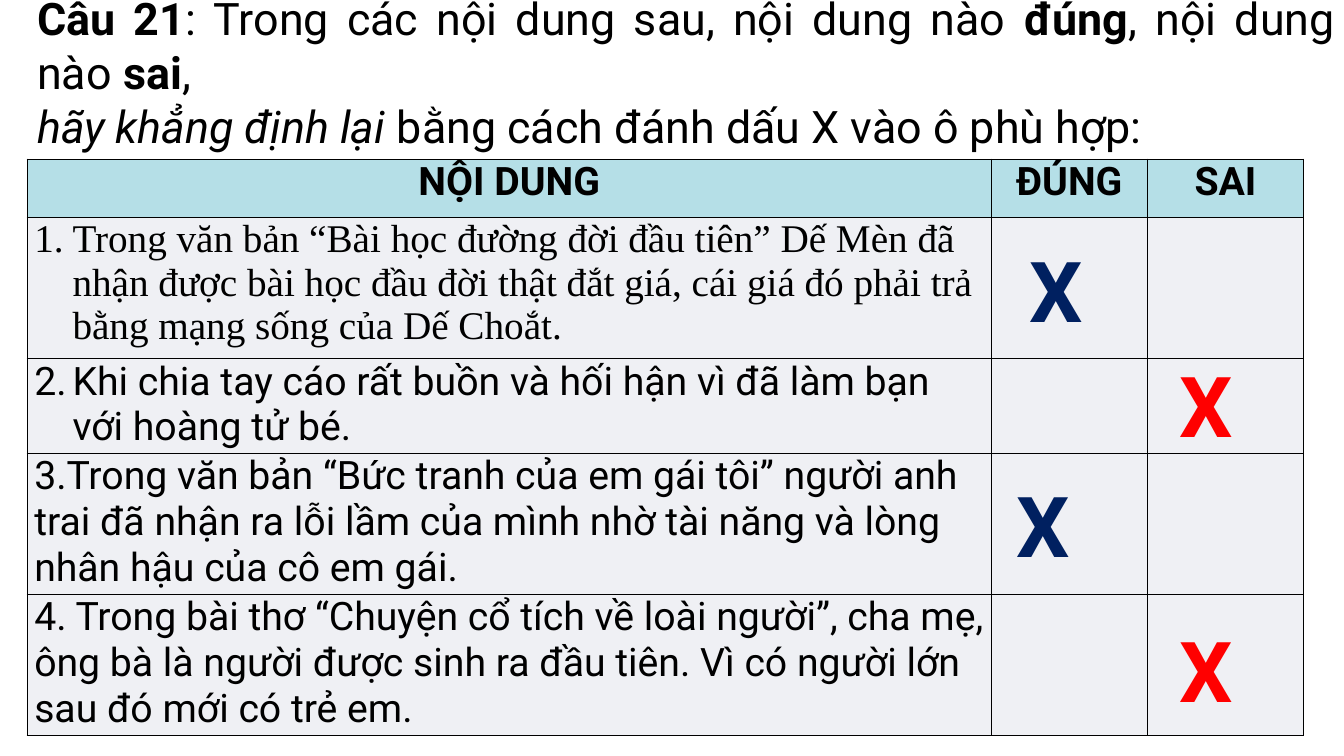
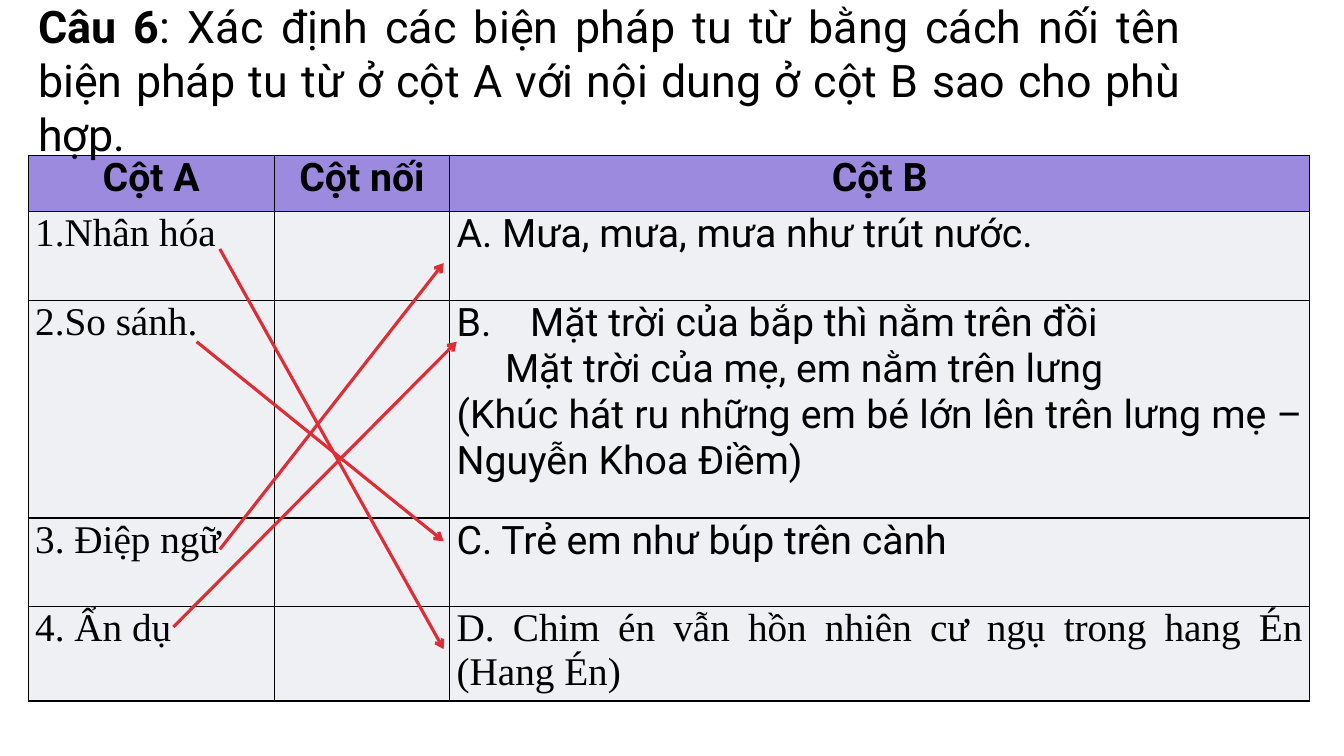
from dataclasses import dataclass

from lxml import etree
from pptx import Presentation
from pptx.dml.color import RGBColor
from pptx.enum.shapes import MSO_CONNECTOR
from pptx.enum.text import MSO_ANCHOR, PP_ALIGN
from pptx.oxml.ns import qn
from pptx.util import Inches, Pt

LEFT, CENTER, JUSTIFY = PP_ALIGN.LEFT, PP_ALIGN.CENTER, PP_ALIGN.JUSTIFY
MIDDLE, TOP = MSO_ANCHOR.MIDDLE, MSO_ANCHOR.TOP
STRAIGHT = MSO_CONNECTOR.STRAIGHT

SANS, SERIF = "Roboto", "Times New Roman"
BLACK, NAVY, RED, ARROW_RED = "000000", "002060", "FF0000", "DD2D35"
BODY_FILL, TEAL, PURPLE = "EFF0F4", "B5DFE7", "9C8ADE"
BORDER_SIDES = ("a:lnL", "a:lnR", "a:lnT", "a:lnB")


def color(hex_string):
    """Turn a hex string into a colour."""
    return RGBColor.from_string(hex_string)


def inches(*lengths):
    """Turn plain numbers into lengths."""
    return [Inches(length) for length in lengths]


@dataclass
class Line:
    """One paragraph of a table cell."""

    text: str
    font: str = SANS
    align: int = LEFT
    number: int = 0
    indent: float = 0
    tab: float = 0


class Worksheet:
    """Hold the shared style and the current slide."""

    def __init__(self):
        """Start a widescreen presentation."""
        self.presentation = Presentation()
        self.presentation.slide_width = Inches(13.33)
        self.presentation.slide_height = Inches(7.5)
        self.slide = None

    def new_slide(self):
        """Add a blank slide and make it current."""
        self.slide = self.presentation.slides.add_slide(self.presentation.slide_layouts[6])

    def style(self, paragraph, size, name=SANS, hex_string=BLACK, bold=None):
        """Set the font of a whole paragraph."""
        font = paragraph.font
        font.size, font.name, font.bold = Pt(size), name, bold
        font.color.rgb = color(hex_string)

    def text_box(self, left, top, width, height, anchor=TOP):
        """Add a wrapping text box and return its text frame."""
        shape = self.slide.shapes.add_textbox(*inches(left, top, width, height))
        frame = shape.text_frame
        frame.word_wrap = True
        frame.vertical_anchor = anchor
        return frame

    def question(self, left, top, width, *paragraphs):
        """Add the question from paragraphs of (text, emphasis) pairs."""
        frame = self.text_box(left, top, width, 1.18, MIDDLE)
        for index, pieces in enumerate(paragraphs):
            paragraph = frame.add_paragraph() if index else frame.paragraphs[0]
            paragraph.alignment = JUSTIFY
            self.style(paragraph, 32)
            for text, emphasis in pieces:
                run = paragraph.add_run()
                run.text = text
                run.font.bold = emphasis == "bold"
                run.font.italic = emphasis == "italic"

    def mark(self, left, top, hex_string):
        """Add a large X."""
        paragraph = self.text_box(left, top, 1.04, 1.11).paragraphs[0]
        paragraph.text = "X"
        self.style(paragraph, 60, hex_string=hex_string, bold=True)

    def arrow(self, start, end):
        """Add a red arrow between two points."""
        line = self.slide.shapes.add_connector(STRAIGHT, *inches(*start, *end))
        line.line.color.rgb = color(ARROW_RED)
        line.line.width = Pt(2.25)
        etree.SubElement(line.line._get_or_add_ln(), qn("a:tailEnd"), type="arrow")
        etree.SubElement(line._element.spPr, qn("a:effectLst"))

    def table(self, left, top, widths, heights, header, header_fill, rows):
        """Add a bordered table with a coloured header row."""
        frame = self.slide.shapes.add_table(
            len(heights), len(widths), *inches(left, top, sum(widths), sum(heights))
        )
        table = frame.table
        table.first_row = table.horz_banding = False
        for column, width in zip(table.columns, widths):
            column.width = Inches(width)
        for row, height in zip(table.rows, heights):
            row.height = Inches(height)
        titles = [[Line(title, align=CENTER)] for title in header]
        for row_index, row in enumerate([titles, *rows]):
            for column_index, lines in enumerate(row):
                cell = table.cell(row_index, column_index)
                is_header = row_index == 0
                self.cell(cell, lines, header_fill if is_header else BODY_FILL, is_header)

    def cell(self, cell, lines, fill, bold):
        """Fill, border and write one table cell."""
        cell.margin_left = cell.margin_right = Inches(0.07)
        cell.margin_top = cell.margin_bottom = 0
        cell.fill.solid()
        cell.fill.fore_color.rgb = color(fill)
        properties = cell._tc.get_or_add_tcPr()
        for index, side in enumerate(BORDER_SIDES):
            border = etree.Element(qn(side), w=str(Pt(1)))
            solid = etree.SubElement(border, qn("a:solidFill"))
            etree.SubElement(solid, qn("a:srgbClr"), val=BLACK)
            properties.insert(index, border)
        for index, line in enumerate(lines):
            frame = cell.text_frame
            paragraph = frame.add_paragraph() if index else frame.paragraphs[0]
            self.cell_line(paragraph, line, bold)

    def cell_line(self, paragraph, line, bold):
        """Write one paragraph of a cell."""
        paragraph.text = line.text
        paragraph.alignment = line.align
        properties = paragraph._p.get_or_add_pPr()
        if line.indent:
            properties.set("marL", str(Inches(line.indent)))
        if line.number:
            properties.set("indent", str(-Inches(line.indent)))
            etree.SubElement(
                properties, qn("a:buAutoNum"), type="arabicPeriod", startAt=str(line.number)
            )
        if line.tab:
            tabs = etree.SubElement(properties, qn("a:tabLst"))
            etree.SubElement(tabs, qn("a:tab"), pos=str(Inches(line.tab)), algn="l")
        self.style(paragraph, 28, line.font, bold=bold)


def true_or_false(sheet):
    """Build the true or false question."""
    sheet.new_slide()
    statements = [
        Line(
            "Trong văn bản “Bài học đường đời đầu tiên” Dế Mèn đã nhận được bài học "
            "đầu đời thật đắt giá, cái giá đó phải trả bằng mạng sống của Dế Choắt.",
            SERIF, number=1, indent=0.38,
        ),
        Line(
            "Khi chia tay cáo rất buồn và hối hận vì đã làm bạn với hoàng tử bé.",
            number=2, indent=0.38,
        ),
        Line(
            "3.Trong văn bản “Bức tranh của em gái tôi” người anh trai đã nhận ra "
            "lỗi lầm của mình nhờ tài năng và lòng nhân hậu của cô em gái."
        ),
        Line(
            "4. Trong bài thơ “Chuyện cổ tích về loài người”, cha mẹ, ông bà là người "
            "được sinh ra đầu tiên. Vì có người lớn sau đó mới có trẻ em."
        ),
    ]
    sheet.table(
        0.27, 1.58, [9.56, 1.55, 1.55], [0.58, 1.4, 0.94, 1.4, 1.4],
        ["NỘI DUNG", "ĐÚNG", "SAI"], TEAL,
        [[[statement], [], []] for statement in statements],
    )
    sheet.question(
        0.27, 0.12, 13.07,
        [
            ("Câu 21", "bold"),
            (": Trong các nội dung sau, nội dung nào ", ""),
            ("đúng", "bold"),
            (", nội dung nào ", ""),
            ("sai", "bold"),
            (",", ""),
        ],
        [
            ("hãy khẳng định lại", "italic"),
            (" bằng cách đánh dấu X vào ô phù hợp:", ""),
        ],
    )
    for left, top, hex_string in [
        (10.11, 2.32, NAVY),
        (11.6, 3.46, RED),
        (9.98, 4.65, NAVY),
        (11.6, 6.09, RED),
    ]:
        sheet.mark(left, top, hex_string)


def matching(sheet):
    """Build the matching question."""
    sheet.new_slide()
    pairs = [
        ("1.Nhân hóa", [Line("A. Mưa, mưa, mưa như trút nước.")]),
        (
            "2.So sánh.",
            [
                Line("B.\tMặt trời của bắp thì nằm trên đồi", tab=0.73),
                Line("Mặt trời của mẹ, em nằm trên lưng", indent=0.48),
                Line(
                    "(Khúc hát ru những em bé lớn lên trên lưng mẹ – Nguyễn Khoa Điềm)",
                    align=JUSTIFY,
                ),
            ],
        ),
        ("3. Điệp ngữ", [Line("C. Trẻ em như búp trên cành")]),
        (
            "4. Ẩn dụ",
            [Line("D. Chim én vẫn hồn nhiên cư ngụ trong hang Én (Hang Én)", SERIF, JUSTIFY)],
        ),
    ]
    sheet.table(
        0.28, 1.54, [2.44, 1.74, 8.53], [0.56, 0.88, 2.16, 0.88, 0.93],
        ["Cột A", "Cột nối", "Cột B"], PURPLE,
        [[[Line(device, SERIF)], [], example] for device, example in pairs],
    )
    sheet.question(
        0.28, 0.2, 11.54,
        [
            ("Câu 6", "bold"),
            (
                ": Xác định các biện pháp tu từ bằng cách nối tên biện pháp tu từ "
                "ở cột A với nội dung ở cột B sao cho phù hợp.",
                "",
            ),
        ],
    )
    for start, end in [
        ((2.18, 2.47), (4.4, 6.44)),
        ((1.95, 3.39), (4.4, 5.37)),
        ((2.18, 5.45), (4.4, 2.61)),
        ((1.72, 6.22), (4.53, 3.39)),
    ]:
        sheet.arrow(start, end)


def main():
    """Build and save the presentation."""
    sheet = Worksheet()
    true_or_false(sheet)
    matching(sheet)
    sheet.presentation.save("out.pptx")


if __name__ == "__main__":
    main()
